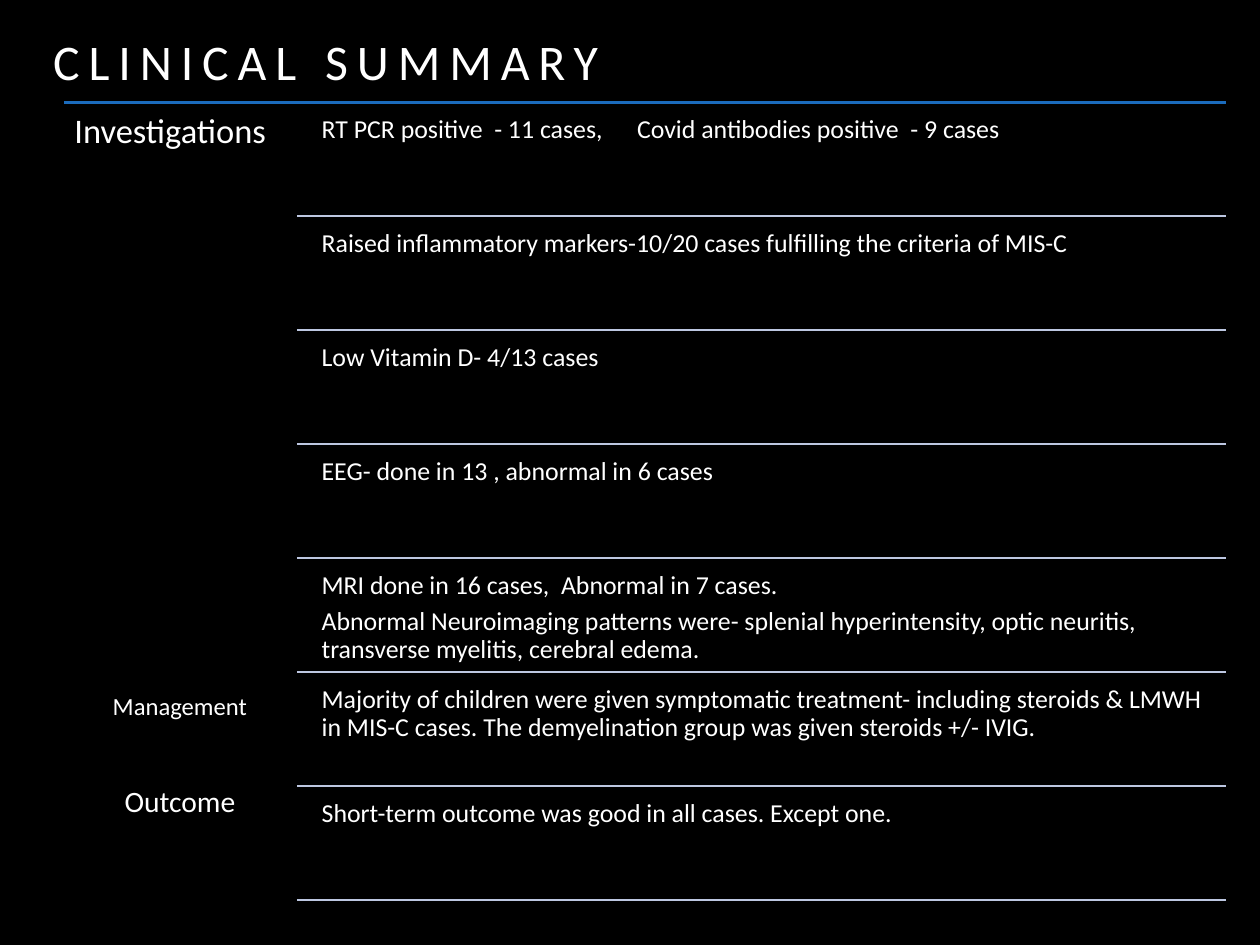
from lxml import etree
from pptx import Presentation
from pptx.dml.color import RGBColor
from pptx.enum.shapes import MSO_CONNECTOR
from pptx.enum.text import MSO_ANCHOR, MSO_AUTO_SIZE, PP_ALIGN
from pptx.oxml.ns import qn
from pptx.util import Pt

PX = 9144  # 100 px to the inch
BLACK = RGBColor(0x00, 0x00, 0x00)
WHITE = RGBColor(0xFF, 0xFF, 0xFF)
BLUE = RGBColor(0x1B, 0x6B, 0xBC)
LAVENDER = RGBColor(0xBD, 0xC7, 0xE1)
STRAIGHT = MSO_CONNECTOR.STRAIGHT
TOP, MIDDLE = MSO_ANCHOR.TOP, MSO_ANCHOR.MIDDLE
LEFT, CENTER = PP_ALIGN.LEFT, PP_ALIGN.CENTER
NO_AUTOFIT = MSO_AUTO_SIZE.NONE

RIGHT_EDGE = 1384
ROW_PITCH = 772 / 6
TAB_POS = 356


def put_text(sp, box, lines, size, inset=0, anchor=TOP, align=LEFT, spacing=1.0, after=0):
    sp.left, sp.top, sp.width, sp.height = (round(v * PX) for v in box)
    tf = sp.text_frame
    tf.text = "\n".join(lines)
    tf.word_wrap = True
    tf.auto_size = NO_AUTOFIT
    tf.vertical_anchor = anchor
    tf.margin_left = tf.margin_right = tf.margin_top = tf.margin_bottom = inset * PX
    for p in tf.paragraphs:
        p.alignment = align
        p.line_spacing = spacing
        p.space_after = Pt(after)
        p.font.name = "Calibri"
        p.font.size = Pt(size)
        p.font.color.rgb = WHITE
    return tf.paragraphs[0]


def add_rule(x, y, color):
    line = s.shapes.add_connector(STRAIGHT, x * PX, round(y * PX), RIGHT_EDGE * PX, round(y * PX))
    line.line.color.rgb = color
    line.line.width = Pt(2)
    etree.SubElement(line._element.spPr, qn("a:effectLst"))


prs = Presentation()
prs.slide_width, prs.slide_height = 1422 * PX, 1067 * PX
s = prs.slides.add_slide(prs.slide_layouts[5])
s.background.fill.solid()
s.background.fill.fore_color.rgb = BLACK

# Title with wide letter spacing
p = put_text(s.shapes.title, (60, 35, 1290, 61), ["CLINICAL SUMMARY"], 40.5)
p.runs[0]._r.get_or_add_rPr().set("spc", "720")
add_rule(72, 116, BLUE)

# Section labels: text, box, size, inset, anchor, alignment, line spacing
labels = [
    ("Investigations", (72, 116, 262, 907), 28, 12, TOP, LEFT, 0.9),
    ("Management", (102, 774, 202, 45), 20, 6, MIDDLE, CENTER, 1.0),
    ("Outcome", (102, 878, 202, 52), 24, 6, MIDDLE, CENTER, 1.0),
]
for text, box, size, inset, anchor, align, spacing in labels:
    put_text(s.shapes.add_textbox(0, 0, 0, 0), box, [text], size, inset, anchor, align, spacing)

# Findings, each closed by a rule
findings = [
    ["RT PCR positive  - 11 cases,\tCovid antibodies positive  - 9 cases"],
    ["Raised inflammatory markers-10/20 cases fulfilling the criteria of MIS-C"],
    ["Low Vitamin D- 4/13 cases"],
    ["EEG- done in 13 , abnormal in 6 cases"],
    ["MRI done in 16 cases,  Abnormal in 7 cases.",
     "Abnormal Neuroimaging patterns were- splenial hyperintensity, optic neuritis, "
     "transverse myelitis, cerebral edema."],
    ["Majority of children were given symptomatic treatment- including steroids & LMWH "
     "in MIS-C cases. The demyelination group was given steroids +/- IVIG."],
    ["Short-term outcome was good in all cases. Except one."],
]
for i, lines in enumerate(findings):
    box = (354, 122 + i * ROW_PITCH, 1030, 122)
    p = put_text(s.shapes.add_textbox(0, 0, 0, 0), box, lines, 21, 9, spacing=0.9, after=7)
    if "\t" in lines[0]:
        tabs = etree.Element(qn("a:tabLst"))
        etree.SubElement(tabs, qn("a:tab"), pos=str(TAB_POS * PX), algn="l")
        p._p.pPr.find(qn("a:defRPr")).addprevious(tabs)
    add_rule(335, 244 + i * ROW_PITCH, LAVENDER)

prs.save("out.pptx")
